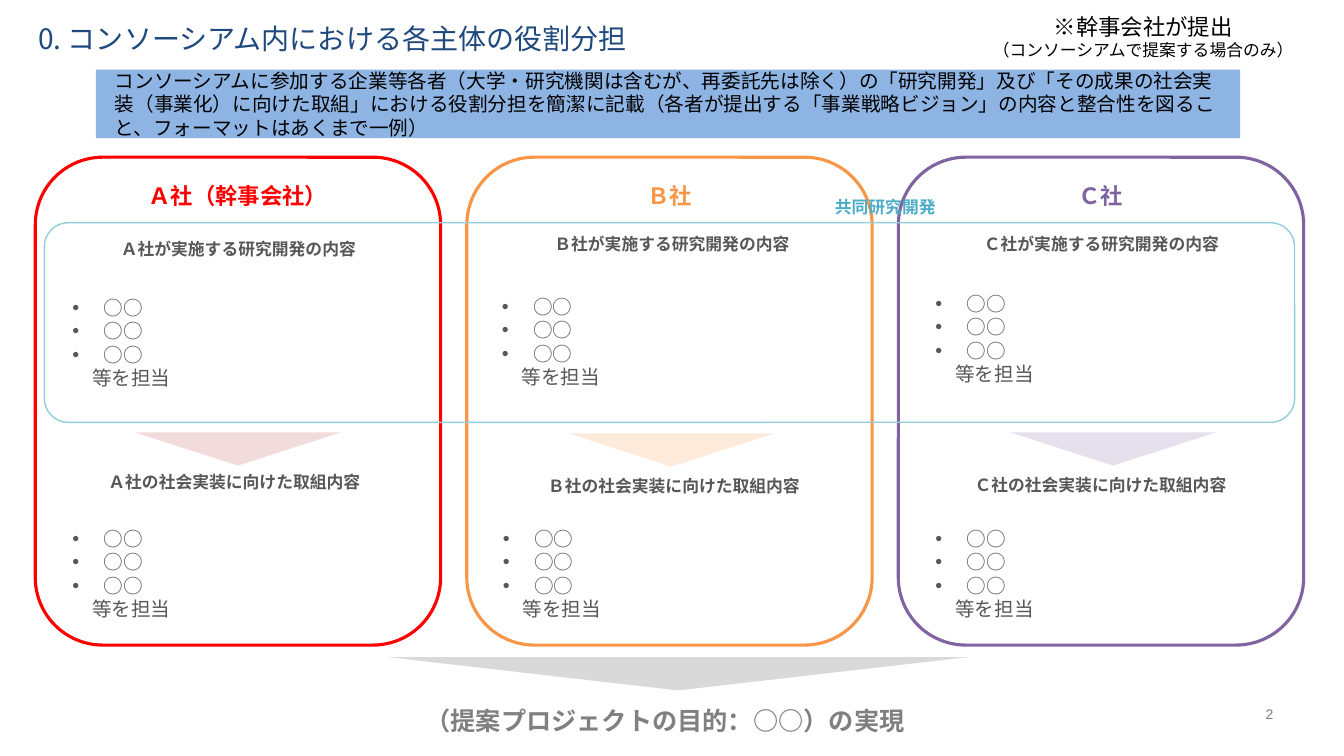
from lxml import etree
from pptx import Presentation, util as u
from pptx.dml.color import RGBColor
from pptx.enum import shapes, text
from pptx.oxml.ns import qn

PX = 9144
FONT = "Noto Sans CJK JP"
KIND = shapes.MSO_SHAPE
ALIGN = text.PP_ALIGN
ANCHOR = text.MSO_ANCHOR
INK = {
    "black": "000000", "body": "575757", "title": "1F497D", "grey": "808080",
    "band": "8EB4E3", "joint": "4BACC6", "frame": "93CDDD", "goal": "D9D9D9",
    "red": "FF0000", "orange": "F79646", "purple": "8064A2",
    "pink": "F2DCDB", "peach": "FDEADA", "lilac": "E6E0EC",
}
TASKS = ["○○", "○○", "○○", "　等を担当"]
FIRMS = [
    dict(name="Ａ社（幹事会社）", who="Ａ社", left=35, line="red", tint="pink",
         study=(84, 226), work=(62, 269), arrow=(134, 429),
         plan=(80, 457), duty=(62, 498)),
    dict(name="Ｂ社", who="Ｂ社", left=463, line="orange", tint="peach",
         study=(514, 221), work=(488, 268), arrow=(564, 430),
         plan=(516, 461), duty=(489, 498)),
    dict(name="Ｃ社", who="Ｃ社", left=891, line="purple", tint="lilac",
         study=(940, 221), work=(918, 265), arrow=(1002, 429),
         plan=(939, 460), duty=(918, 498)),
]


def color(name):
    return RGBColor.from_string(INK[name])


def place(item, left, top, width, height):
    item.left, item.top = left * PX, top * PX
    item.width, item.height = width * PX, height * PX


def indent(para, left, hang=0):
    props = para._p.get_or_add_pPr()
    props.set("marL", str(left * PX))
    props.set("indent", str(hang * PX))
    return props


def bullet(para):
    props = indent(para, 31, -31)
    etree.SubElement(props, qn("a:buFont")).set("typeface", "Arial")
    etree.SubElement(props, qn("a:buChar")).set("char", "•")


def write(item, lines, size=12, ink="body", bold=False, align=ALIGN.CENTER,
          anchor=ANCHOR.MIDDLE, font=FONT, inset=None, dots=0):
    frame = item.text_frame
    frame.word_wrap = True
    frame.auto_size = text.MSO_AUTO_SIZE.NONE
    frame.vertical_anchor = anchor
    if inset is not None:
        frame.margin_left = frame.margin_right = inset * PX
        frame.margin_top = frame.margin_bottom = inset * PX
    for num, line in enumerate(lines):
        para = frame.paragraphs[0] if num == 0 else frame.add_paragraph()
        para.alignment = align
        if num < dots:
            bullet(para)
        run = para.add_run()
        run.text = line
        run.font.size = u.Pt(size)
        run.font.bold = bold
        run.font.name = font
        run.font.color.rgb = color(ink)
        east = etree.SubElement(run._r.get_or_add_rPr(), qn("a:ea"))
        east.set("typeface", font)
    return frame


def label(slide, box, lines, **form):
    item = slide.shapes.add_textbox(*(n * PX for n in box))
    return write(item, lines, **form)


def shape(slide, kind, box, fill=None, line=None, weight=1):
    item = slide.shapes.add_shape(kind, *(n * PX for n in box))
    item.shadow.inherit = False
    if fill:
        item.fill.solid()
        item.fill.fore_color.rgb = color(fill)
    else:
        item.fill.background()
    if line:
        item.line.color.rgb = color(line)
        item.line.width = u.Pt(weight)
    else:
        item.line.fill.background()
    return item


def arrow(slide, box, fill):
    item = shape(slide, KIND.ISOSCELES_TRIANGLE, box, fill)
    item._element.spPr.find(qn("a:xfrm")).set("flipV", "1")


def panel(slide, firm):
    box = (firm["left"], 156, 402, 484)
    item = shape(slide, KIND.ROUNDED_RECTANGLE, box,
                 line=firm["line"], weight=2.25)
    write(item, [firm["name"]], size=16, ink=firm["line"], bold=True,
          anchor=ANCHOR.TOP)


def detail(slide, firm):
    heads = {"study": "が実施する研究開発の内容", "plan": "の社会実装に向けた取組内容"}
    for key, tail in heads.items():
        label(slide, (*firm[key], 305, 42), [firm["who"] + tail], bold=True)
    for key in ("work", "duty"):
        label(slide, (*firm[key], 349, 142), TASKS, size=14,
              align=ALIGN.LEFT, dots=3)
    arrow(slide, (*firm["arrow"], 204, 33), firm["tint"])


def header(slide):
    band = shape(slide, KIND.RECTANGLE, (95, 69, 1135, 68), "band")
    frame = write(band, [
        "コンソーシアムに参加する企業等各者（大学・研究機関は含むが、再委託先は除く）の"
        "「研究開発」及び「その成果の社会実装（事業化）に向けた取組」における役割分担を"
        "簡潔に記載（各者が提出する「事業戦略ビジョン」の内容と整合性を図ること、"
        "フォーマットはあくまで一例）"], size=14, ink="black", align=ALIGN.LEFT)
    indent(frame.paragraphs[0], 9)
    title = slide.shapes.title
    place(title, 38, 25, 1196, 30)
    frame = write(title, ["0. コンソーシアム内における各主体の役割分担"], size=20,
                  ink="title", align=ALIGN.LEFT, anchor=ANCHOR.TOP, inset=0)
    frame.paragraphs[0].line_spacing = 0.9
    note = shape(slide, KIND.RECTANGULAR_CALLOUT, (946, 2, 376, 68))
    note.adjustments[0], note.adjustments[1] = 0.5, 0
    frame = write(note, ["※幹事会社が提出", "（コンソーシアムで提案する場合のみ）"],
                  ink="black")
    frame.paragraphs[0].runs[0].font.size = u.Pt(16)


def main():
    deck = Presentation()
    deck.slide_width, deck.slide_height = 1333 * PX, 750 * PX
    slide = deck.slides.add_slide(deck.slide_layouts[5])
    header(slide)
    for firm in FIRMS:
        panel(slide, firm)
    joint = shape(slide, KIND.ROUNDED_RECTANGLE, (44, 221, 1240, 198),
                  line="frame")
    joint.adjustments[0] = 0.12
    for firm in FIRMS:
        detail(slide, firm)
    arrow(slide, (385, 652, 575, 33), "goal")
    label(slide, (267, 691, 785, 47), ["（提案プロジェクトの目的：○○）の実現"],
          size=18, ink="grey", bold=True)
    label(slide, (794, 184, 168, 42), ["共同研究開発"], ink="joint", bold=True)
    label(slide, (1221, 700, 42, 17), ["2"], size=10, ink="grey", font="Arial",
          align=ALIGN.RIGHT, anchor=ANCHOR.BOTTOM, inset=0)
    deck.save("out.pptx")


if __name__ == "__main__":
    main()
